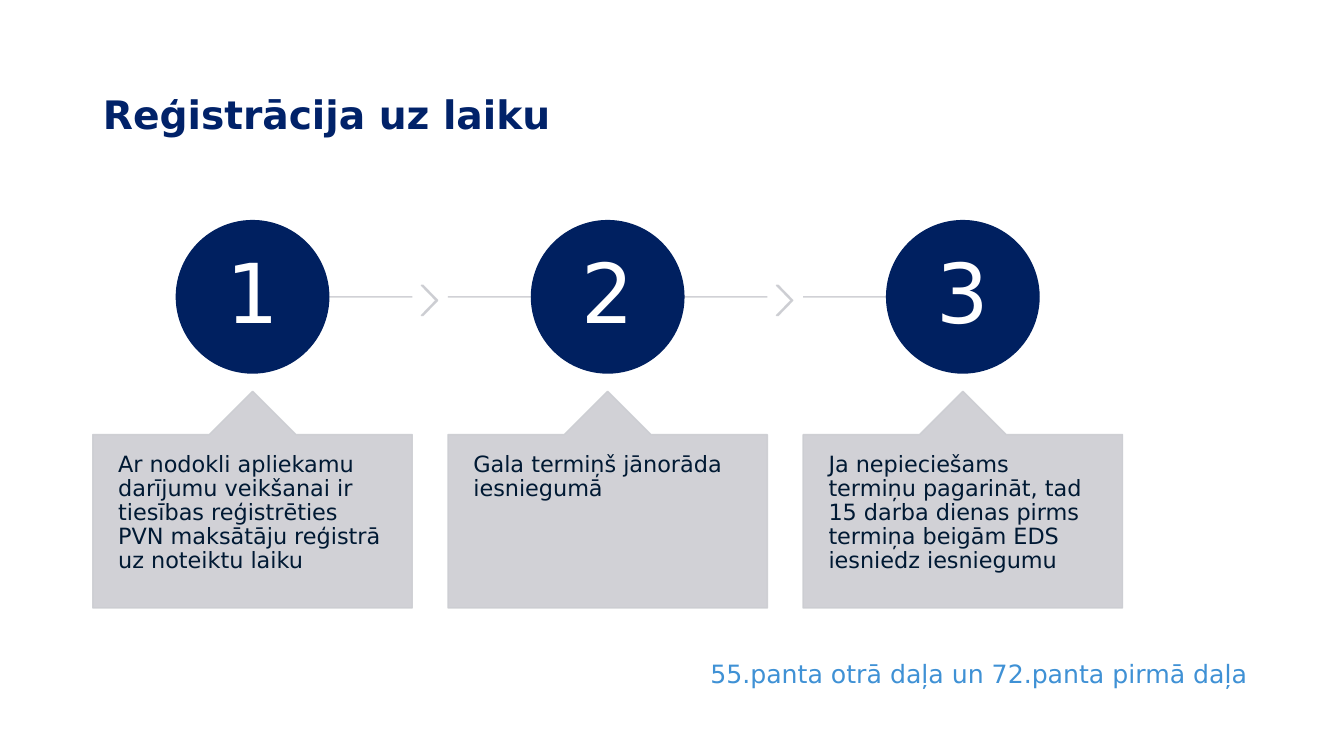
from lxml.etree import SubElement
from pptx import Presentation
from pptx.dml.color import RGBColor
from pptx.enum.shapes import MSO_CONNECTOR, MSO_SHAPE
from pptx.enum.text import MSO_ANCHOR, PP_ALIGN
from pptx.oxml.ns import qn
from pptx.util import Cm, Pt

COLOURS = {
    "title": "012269",
    "circle": "002060",
    "panel": "CCCDD2",
    "number": "FFFFFF",
    "body": "001933",
    "reference": "3F91D5",
}
STEPS = [
    "Ar nodokli apliekamu darījumu veikšanai ir tiesības reģistrēties "
    "PVN maksātāju reģistrā uz noteiktu laiku",
    "Gala termiņš jānorāda iesniegumā",
    "Ja nepieciešams termiņu pagarināt, tad 15 darba dienas pirms "
    "termiņa beigām EDS iesniedz iesniegumu",
]
LEFT, STEP_PITCH, PANEL_WIDTH = 2.34, 8.95, 8.05
CIRCLE_SIZE, CIRCLE_TOP = 3.84, 5.56
LINE_Y = CIRCLE_TOP + CIRCLE_SIZE / 2


class SlideBuilder:
    """Adds styled elements to one slide; all lengths are centimetres."""

    font_name = "DejaVu Sans"
    panel_opacity = 90

    def __init__(self, slide):
        self.slide = slide

    def paint(self, fill, colour, opacity=100):
        fill.solid()
        fill.fore_color.rgb = RGBColor.from_string(COLOURS[colour])
        if opacity < 100:
            element = fill._xPr.find(".//" + qn("a:srgbClr"))
            SubElement(element, qn("a:alpha"), val=str(opacity * 1000))

    def set_text(self, shape, text, colour, size, margins=None, anchor=MSO_ANCHOR.TOP,
                 alignment=PP_ALIGN.LEFT, spacing=0.9, bold=False):
        frame = shape.text_frame
        frame.text = text
        frame_values = {"word_wrap": True, "vertical_anchor": anchor}
        if margins:
            horizontal, vertical = margins
            frame_values |= {"margin_left": Cm(horizontal), "margin_right": Cm(horizontal),
                             "margin_top": Cm(vertical), "margin_bottom": Cm(vertical)}
        paragraph = frame.paragraphs[0]
        font_values = {"name": self.font_name, "size": Pt(size), "bold": bold}
        paragraph_values = {"alignment": alignment, "line_spacing": spacing}
        for target, values in ((frame, frame_values), (paragraph, paragraph_values),
                               (paragraph.runs[0].font, font_values)):
            for name, value in values.items():
                setattr(target, name, value)
        paragraph.runs[0].font.color.rgb = RGBColor.from_string(COLOURS[colour])

    def title(self, text, left, top, width, height):
        shape = self.slide.shapes.title
        for name, value in {"left": left, "top": top, "width": width, "height": height}.items():
            setattr(shape, name, Cm(value))
        self.set_text(shape, text, "title", 28, anchor=MSO_ANCHOR.MIDDLE, bold=True)

    def shape(self, kind, left, top, width, height, colour, opacity=100, adjustments=()):
        shape = self.slide.shapes.add_shape(kind, Cm(left), Cm(top), Cm(width), Cm(height))
        shape.shadow.inherit = False
        for index, value in enumerate(adjustments):
            shape.adjustments[index] = value
        self.paint(shape.fill, colour, opacity)
        self.paint(shape.line.fill, colour, opacity)
        shape.line.width = Pt(1)
        return shape

    def line(self, start, end, y):
        connector = self.slide.shapes.add_connector(
            MSO_CONNECTOR.STRAIGHT, Cm(start), Cm(y), Cm(end), Cm(y))
        self.paint(connector.line.fill, "panel", self.panel_opacity)
        connector.line.width = Pt(1)
        SubElement(connector._element.spPr, qn("a:effectLst"))

    def chevron(self, left, top, width, height):
        self.shape(MSO_SHAPE.CHEVRON, left, top, width, height, "panel",
                   self.panel_opacity, [0.9])

    def numbered_circle(self, number, centre):
        circle = self.shape(MSO_SHAPE.OVAL, centre - CIRCLE_SIZE / 2, CIRCLE_TOP,
                            CIRCLE_SIZE, CIRCLE_SIZE, "circle")
        self.set_text(circle, str(number), "number", 59, (0.15, 0.15),
                      MSO_ANCHOR.MIDDLE, PP_ALIGN.CENTER)

    def callout(self, text, left):
        panel = self.shape(MSO_SHAPE.UP_ARROW_CALLOUT, left, 9.86, PANEL_WIDTH, 5.46,
                           "panel", self.panel_opacity, [0.5, 0.2, 0.2, 1])
        self.set_text(panel, text, "body", 16, (0.64, 0.46))

    def text_box(self, text, left, top, width, height):
        box = self.slide.shapes.add_textbox(Cm(left), Cm(top), Cm(width), Cm(height))
        self.set_text(box, text, "reference", 18, spacing=1)


def main():
    presentation = Presentation()
    presentation.slide_width, presentation.slide_height = Cm(33.87), Cm(19.05)
    builder = SlideBuilder(presentation.slides.add_slide(presentation.slide_layouts[5]))

    builder.title("Reģistrācija uz laiku", LEFT, 1.68, 26.87, 2.51)
    last = len(STEPS) - 1
    for index, text in enumerate(STEPS):
        left = LEFT + index * STEP_PITCH
        centre = left + PANEL_WIDTH / 2
        line_start = centre if index == 0 else left
        line_end = centre if index == last else left + PANEL_WIDTH
        builder.line(line_start, line_end, LINE_Y)
        if index < last:
            builder.chevron(left + 8.28, 7.19, 0.41, 0.76)
        builder.numbered_circle(index + 1, centre)
        builder.callout(text, left)
    builder.text_box("55.panta otrā daļa un 72.panta pirmā daļa", 17.65, 16.46, 15.32, 1.02)

    presentation.save("out.pptx")


if __name__ == "__main__":
    main()
